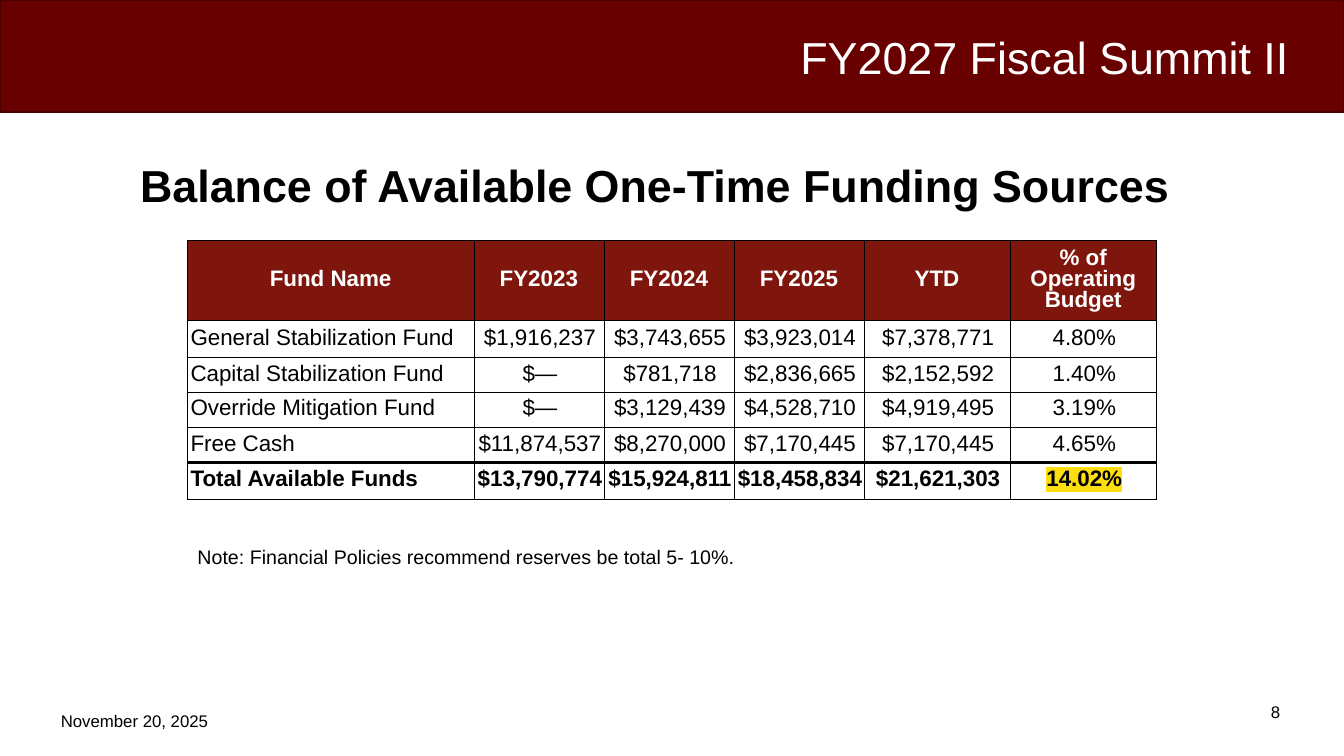
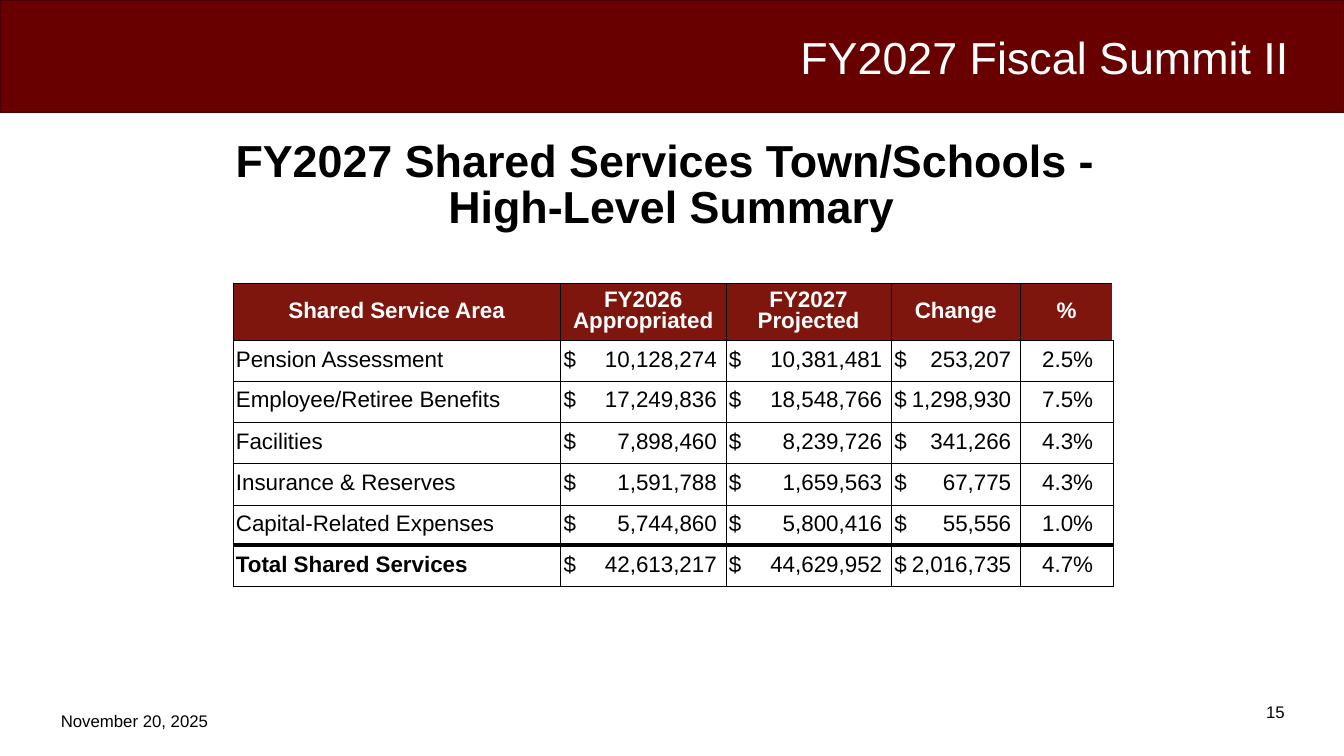
"""Build two fiscal summit slides with fund and shared service tables."""
import lxml.etree
import pptx
import pptx.dml.color
import pptx.enum.shapes
import pptx.enum.text
import pptx.oxml.ns
import pptx.util

PX = 9144
FONT = "Arial"
BLACK = pptx.dml.color.RGBColor(0x00, 0x00, 0x00)
WHITE = pptx.dml.color.RGBColor(0xFF, 0xFF, 0xFF)
MAROON = pptx.dml.color.RGBColor(0x68, 0x00, 0x00)
DARK_MAROON = pptx.dml.color.RGBColor(0x4A, 0x00, 0x00)
BRICK = pptx.dml.color.RGBColor(0x7F, 0x16, 0x0E)
YELLOW = pptx.dml.color.RGBColor(0xFF, 0xDE, 0x0F)
LEFT = pptx.enum.text.PP_ALIGN.LEFT
CENTER = pptx.enum.text.PP_ALIGN.CENTER
TOP = pptx.enum.text.MSO_ANCHOR.TOP
MIDDLE = pptx.enum.text.MSO_ANCHOR.MIDDLE
SUMMIT = "FY2027 Fiscal Summit II"
MEETING_DATE = "November 20, 2025"


def px(length):
    return pptx.util.Emu(length * PX)


def add_element(parent, tag, **attributes):
    return lxml.etree.SubElement(parent, pptx.oxml.ns.qn(tag), **attributes)


def add_color(parent, color):
    add_element(parent, "a:srgbClr", val=str(color))


class Deck:
    def __init__(self):
        self.presentation = pptx.Presentation()
        self.presentation.slide_width = px(1333)
        self.presentation.slide_height = px(750)
        self.slide = None

    def start_slide(self, number):
        blank = self.presentation.slide_layouts[6]
        self.slide = self.presentation.slides.add_slide(blank)
        self.band()
        self.text(SUMMIT, (784, 31, 524, 59), 32, color=WHITE, spacing=0.87)
        self.text(str(number), (1228, 690, 74, 35), 12, align=CENTER)
        self.text(MEETING_DATE, (35, 699, 197, 35), 12, align=CENTER)

    def band(self):
        band = self.slide.shapes.add_shape(
            pptx.enum.shapes.MSO_SHAPE.RECTANGLE, 0, 0, px(1333), px(111))
        band.shadow.inherit = False
        band.fill.solid()
        band.fill.fore_color.rgb = MAROON
        band.line.color.rgb = DARK_MAROON
        band.line.width = pptx.util.Pt(1)

    def style(self, paragraph, size, color, bold, align, spacing):
        paragraph.alignment = align
        paragraph.line_spacing = spacing
        paragraph.font.name = FONT
        paragraph.font.size = pptx.util.Pt(size)
        paragraph.font.bold = bold
        paragraph.font.color.rgb = color

    def text(self, words, box, size, color=BLACK, bold=False, align=LEFT,
             spacing=1.0, anchor=TOP, margins=(6, 10)):
        frame = self.slide.shapes.add_textbox(*map(px, box)).text_frame
        frame.word_wrap = True
        frame.vertical_anchor = anchor
        frame.margin_left = frame.margin_right = px(10)
        frame.margin_top, frame.margin_bottom = map(px, margins)
        frame.text = words
        for paragraph in frame.paragraphs:
            self.style(paragraph, size, color, bold, align, spacing)

    def title(self, words, left, top):
        self.text(words, (left, top, 1066, 76), 32, bold=True, align=CENTER,
                  spacing=0.87, anchor=MIDDLE, margins=(3, 5))

    def table(self, rows, left, top, widths, heights, bold_totals,
              header_end=(BLACK, 0.5)):
        table = self.slide.shapes.add_table(
            len(rows), len(widths), px(left), px(top),
            px(sum(widths)), px(sum(heights))).table
        table.first_row = table.horz_banding = False
        for column, width in zip(table.columns, widths):
            column.width = px(width)
        for row, height in zip(table.rows, heights):
            row.height = px(height)
        total = len(rows) - 1
        thin, thick = (BLACK, 0.5), (BLACK, 3)
        for r, row in enumerate(rows):
            for c, words in enumerate(row):
                cell = table.cell(r, c)
                is_header_end = r == 0 and c == len(row) - 1
                self.borders(cell, {
                    "a:lnL": thin,
                    "a:lnR": header_end if is_header_end else thin,
                    "a:lnT": thick if r == total else thin,
                    "a:lnB": thick if r == total - 1 else thin,
                })
                bold = r == 0 or (r == total and c < bold_totals)
                self.cell(cell, words, widths[c], r == 0, c == 0, bold)
        return table

    def cell(self, cell, words, width, is_header, is_label, bold):
        cell.fill.solid()
        cell.fill.fore_color.rgb = BRICK if is_header else WHITE
        cell.vertical_anchor = MIDDLE
        cell.margin_left = px(3)
        cell.margin_right = px(3 if is_header or is_label else 1)
        cell.margin_top = cell.margin_bottom = 0
        cell.text = words
        paragraph = cell.text_frame.paragraphs[0]
        is_accounting = "\t" in words
        if is_accounting:
            stops = add_element(paragraph._p.get_or_add_pPr(), "a:tabLst")
            add_element(stops, "a:tab", pos=str(px(width - 12)), algn="r")
        starts_left = is_accounting or (is_label and not is_header)
        self.style(paragraph, 16, WHITE if is_header else BLACK, bold,
                   LEFT if starts_left else CENTER, 0.83)

    def borders(self, cell, edges):
        properties = cell._tc.get_or_add_tcPr()
        for tag, (color, points) in edges.items():
            edge = add_element(properties, tag, w=str(pptx.util.Pt(points)))
            add_color(add_element(edge, "a:solidFill"), color)

    def highlight(self, cell, color):
        run = cell.text_frame.paragraphs[0].runs[0]
        add_color(add_element(run._r.get_or_add_rPr(), "a:highlight"), color)


FUNDS = [
    ("Fund Name", "FY2023", "FY2024", "FY2025", "YTD",
     "% of Operating Budget"),
    ("General Stabilization Fund", "$1,916,237", "$3,743,655", "$3,923,014",
     "$7,378,771", "4.80%"),
    ("Capital Stabilization Fund", "$—", "$781,718", "$2,836,665",
     "$2,152,592", "1.40%"),
    ("Override Mitigation Fund", "$—", "$3,129,439", "$4,528,710",
     "$4,919,495", "3.19%"),
    ("Free Cash", "$11,874,537", "$8,270,000", "$7,170,445", "$7,170,445",
     "4.65%"),
    ("Total Available Funds", "$13,790,774", "$15,924,811", "$18,458,834",
     "$21,621,303", "14.02%"),
]

SERVICES = [
    ("Shared Service Area", "FY2026 Appropriated", "FY2027 Projected",
     "Change", "%"),
    ("Pension Assessment", "$\t10,128,274", "$\t10,381,481", "$\t253,207",
     "2.5%"),
    ("Employee/Retiree Benefits", "$\t17,249,836", "$\t18,548,766",
     "$\t1,298,930", "7.5%"),
    ("Facilities", "$\t7,898,460", "$\t8,239,726", "$\t341,266", "4.3%"),
    ("Insurance & Reserves", "$\t1,591,788", "$\t1,659,563", "$\t67,775",
     "4.3%"),
    ("Capital-Related Expenses", "$\t5,744,860", "$\t5,800,416", "$\t55,556",
     "1.0%"),
    ("Total Shared Services", "$\t42,613,217", "$\t44,629,952",
     "$\t2,016,735", "4.7%"),
]


def main():
    deck = Deck()

    deck.start_slide(8)
    deck.title("Balance of Available One-Time Funding Sources", 117, 150)
    funds = deck.table(FUNDS, 186, 238, [284, 129, 129, 129, 145, 145],
                       [80, 37, 34, 35, 35, 36], bold_totals=6)
    deck.highlight(funds.cell(5, 5), YELLOW)
    deck.text("Note: Financial Policies recommend reserves be total 5- 10%.",
              (186, 535, 988, 126), 14)

    deck.start_slide(15)
    deck.title("FY2027 Shared Services Town/Schools - \nHigh-Level Summary",
               133, 148)
    deck.table(SERVICES, 231, 281, [325, 164, 164, 128, 92],
               [57, 40, 41, 41, 41, 40, 41], bold_totals=1,
               header_end=(WHITE, 1))

    deck.presentation.save("out.pptx")


if __name__ == "__main__":
    main()
